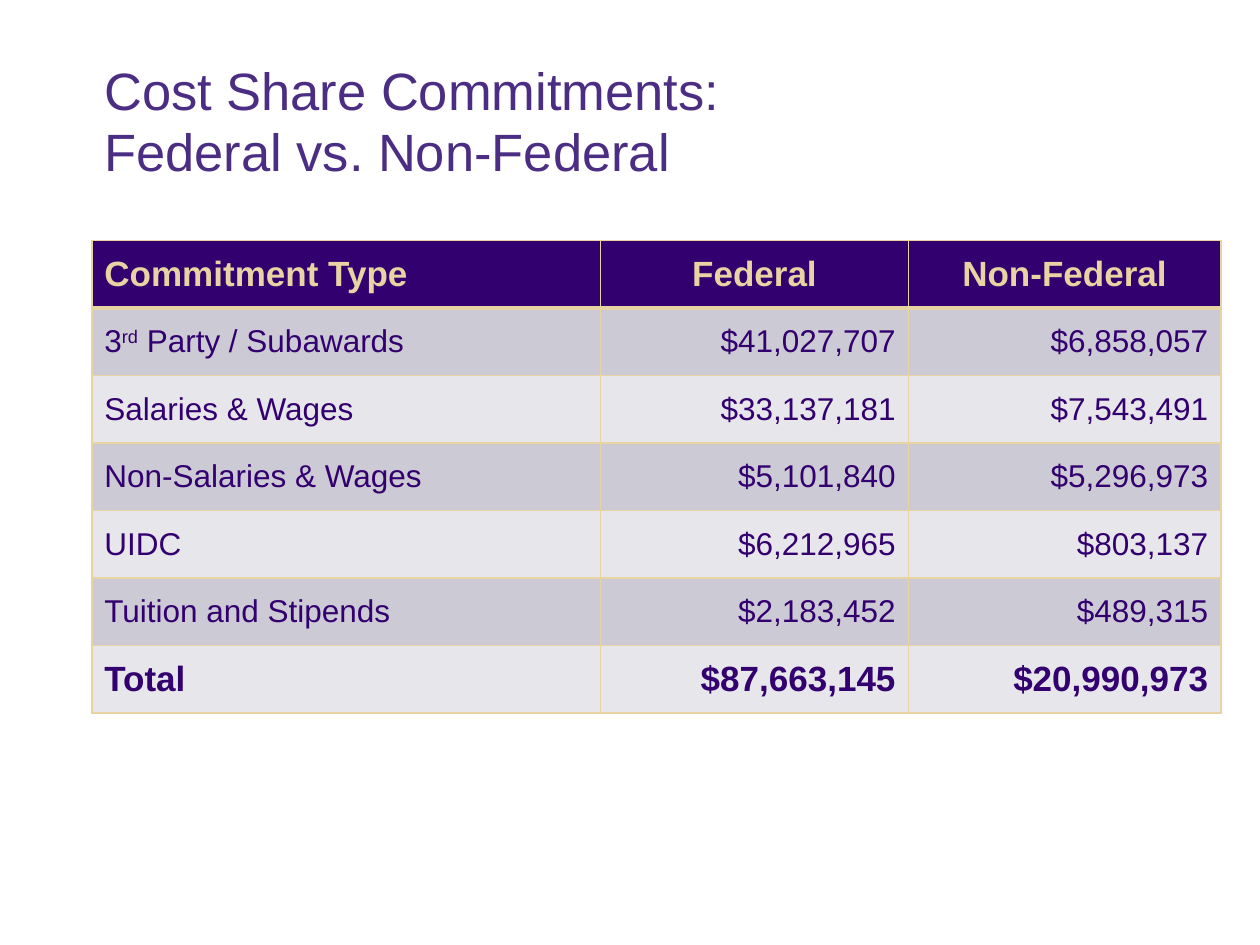
from lxml.etree import SubElement
from pptx import Presentation
from pptx.dml.color import RGBColor
from pptx.enum.text import MSO_ANCHOR, PP_ALIGN
from pptx.oxml import parse_xml
from pptx.oxml.ns import nsdecls, qn
from pptx.util import Cm, Pt

# Content
TITLE = ["Cost Share Commitments:", "Federal vs. Non-Federal"]
ROWS = [
    ("Commitment Type", "Federal", "Non-Federal"),
    (("3", "rd", " Party / Subawards"), "$41,027,707", "$6,858,057"),
    ("Salaries & Wages", "$33,137,181", "$7,543,491"),
    ("Non-Salaries & Wages", "$5,101,840", "$5,296,973"),
    ("UIDC", "$6,212,965", "$803,137"),
    ("Tuition and Stipends", "$2,183,452", "$489,315"),
    ("Total", "$87,663,145", "$20,990,973"),
]
SUPERSCRIPT = "rd"

# Style, lengths in cm
FONT = "Arial"
LILAC, PURPLE, GOLD = "4B2E83", "33006F", "E8D3A2"
BANDS = ("E7E6EB", "CCCAD4")
LEFT, TABLE_TOP, ROW_HEIGHT = 1.85, 4.85, 1.36
COL_WIDTHS = (10.26, 6.2, 6.3)


def rgb(color):
    return RGBColor.from_string(color)


def add_run(p, text, size, color, bold=False):
    r = p.add_run()
    r.text = text
    r.font.name = FONT
    r.font.size = Pt(size)
    r.font.bold = bold
    r.font.color.rgb = rgb(color)
    if text == SUPERSCRIPT:
        r.font._element.set("baseline", "30000")


def set_borders(cell, widths):
    tc_pr = cell._tc.get_or_add_tcPr()
    for i, (side, width) in enumerate(widths.items()):
        line = parse_xml(f'<a:ln{side} {nsdecls("a")} w="{Pt(width)}"/>')
        fill = SubElement(line, qn("a:solidFill"))
        SubElement(fill, qn("a:srgbClr"), val=GOLD)
        tc_pr.insert(i, line)


prs = Presentation()
prs.slide_width, prs.slide_height = Cm(25.4), Cm(19.05)
s = prs.slides.add_slide(prs.slide_layouts[6])

# Title
tf = s.shapes.add_textbox(Cm(LEFT), Cm(1.04), Cm(22.73), Cm(2.74)).text_frame
tf.word_wrap = True
tf.vertical_anchor = MSO_ANCHOR.BOTTOM
for i, text in enumerate(TITLE):
    p = tf.add_paragraph() if i else tf.paragraphs[0]
    p.line_spacing = 0.8
    p.space_before = Pt(6 if i else 0)
    add_run(p, text, 30, LILAC)

# Table
table = s.shapes.add_table(
    len(ROWS), len(COL_WIDTHS), Cm(LEFT), Cm(TABLE_TOP),
    Cm(sum(COL_WIDTHS)), Cm(ROW_HEIGHT * len(ROWS))).table
for column, width in zip(table.columns, COL_WIDTHS):
    column.width = Cm(width)

for i, row in enumerate(ROWS):
    table.rows[i].height = Cm(ROW_HEIGHT)
    header = i == 0
    strong = header or i == len(ROWS) - 1
    for j, content in enumerate(row):
        cell = table.cell(i, j)
        cell.vertical_anchor = MSO_ANCHOR.MIDDLE
        cell.fill.solid()
        cell.fill.fore_color.rgb = rgb(PURPLE if header else BANDS[i % 2])
        set_borders(cell, {"L": 1, "R": 1, "T": 3 if i == 1 else 1,
                           "B": 3 if header else 1})
        p = cell.text_frame.paragraphs[0]
        if j:
            p.alignment = PP_ALIGN.CENTER if header else PP_ALIGN.RIGHT
        for text in [content] if isinstance(content, str) else content:
            add_run(p, text, 20 if strong else 18,
                    GOLD if header else PURPLE, strong)

prs.save("out.pptx")
